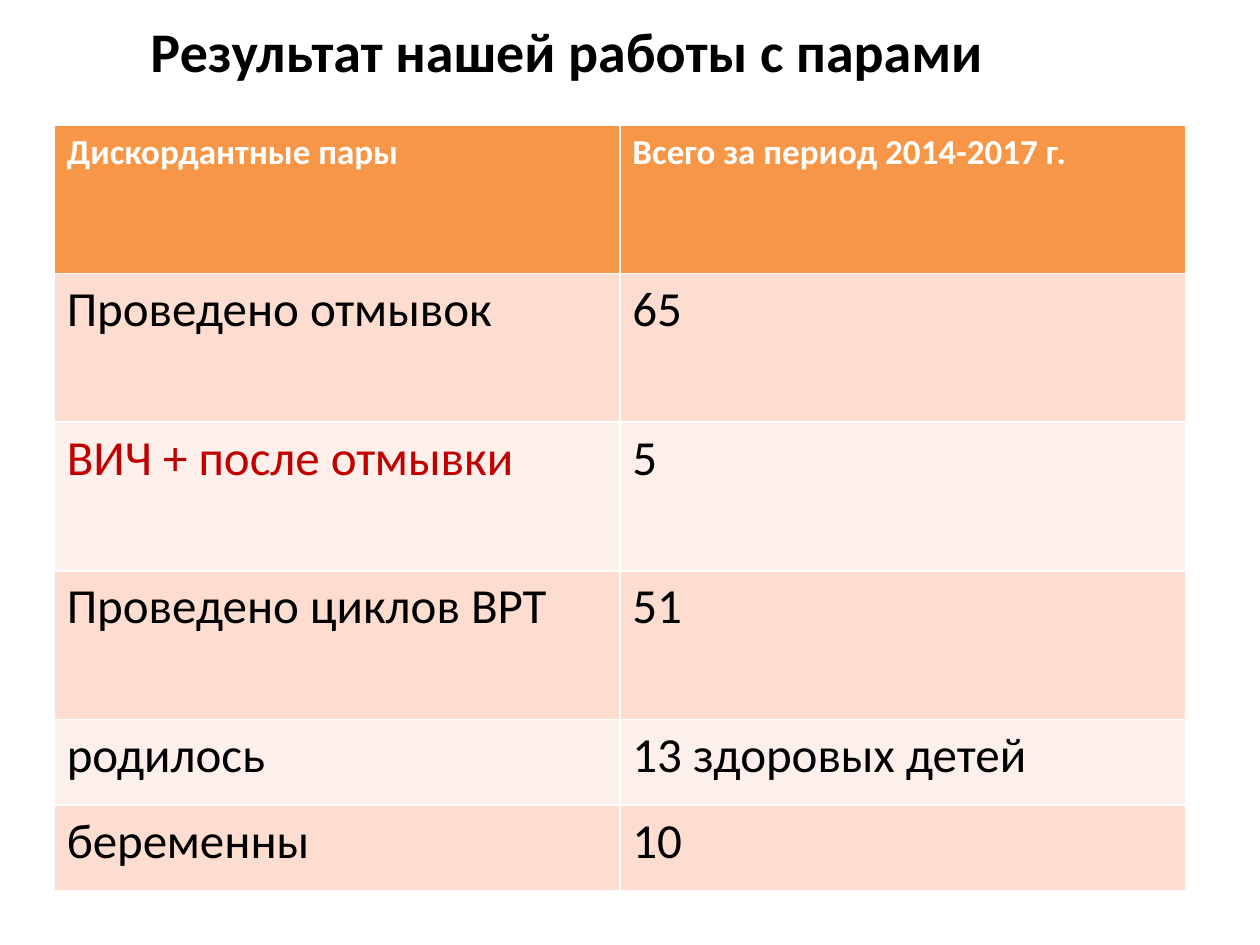
"""Build a slide with the results of work with discordant couples."""
from pptx import Presentation
from pptx.dml.color import RGBColor
from pptx.enum.text import MSO_ANCHOR, PP_ALIGN
from pptx.util import Inches, Pt

TOP = MSO_ANCHOR.TOP
LEFT, CENTER = PP_ALIGN.LEFT, PP_ALIGN.CENTER
FONT = "Calibri"
TITLE_ONLY = 5

BLACK = RGBColor(0x00, 0x00, 0x00)
WHITE = RGBColor(0xFF, 0xFF, 0xFF)
RED = RGBColor(0xC0, 0x00, 0x00)
ORANGE = RGBColor(0xF7, 0x96, 0x46)
BANDS = (RGBColor(0xFD, 0xEF, 0xE9), RGBColor(0xFC, 0xDD, 0xCF))

TITLE = "Результат нашей работы с парами"
HEADER = ("Дискордантные пары", "Всего за период 2014-2017 г.")
RESULTS = [
    ("Проведено отмывок", "65"),
    ("ВИЧ + после отмывки", "5"),
    ("Проведено циклов ВРТ", "51"),
    ("родилось", "13 здоровых детей"),
    ("беременны", "10"),
]
HIGHLIGHT = "ВИЧ + после отмывки"

SLIDE_W, SLIDE_H = 10, 7.5
TITLE_BOX = (0, 0.08, 0.9 * SLIDE_W, 6.59)
TABLE_LEFT, TABLE_TOP, COLUMN_W = 0.43, 0.99, 4.49
TALL, SHORT = 1.18, 0.68
ROW_HEIGHTS = [TALL] * 4 + [SHORT] * 2


def write(frame, text, size, color=BLACK, bold=False, align=LEFT):
    frame.text = text
    paragraph = frame.paragraphs[0]
    paragraph.alignment = align
    font = paragraph.runs[0].font
    font.name, font.size, font.bold = FONT, Pt(size), bold
    font.color.rgb = color


def add_title(slide):
    title = slide.shapes.title
    title.left, title.top, title.width, title.height = map(Inches, TITLE_BOX)
    title.text_frame.vertical_anchor = TOP
    write(title.text_frame, TITLE, size=32, bold=True, align=CENTER)


def add_results(slide):
    rows = [HEADER, *RESULTS]
    place = (TABLE_LEFT, TABLE_TOP, COLUMN_W * len(HEADER), sum(ROW_HEIGHTS))
    results = slide.shapes.add_table(len(rows), len(HEADER), *map(Inches, place)).table
    for column in results.columns:
        column.width = Inches(COLUMN_W)
    for r, (row, height) in enumerate(zip(rows, ROW_HEIGHTS)):
        results.rows[r].height = Inches(height)
        for c, text in enumerate(row):
            cell = results.cell(r, c)
            cell.fill.solid()
            if r == 0:
                cell.fill.fore_color.rgb = ORANGE
                write(cell.text_frame, text, size=20, color=WHITE, bold=True)
            else:
                cell.fill.fore_color.rgb = BANDS[r % 2]
                color = RED if text == HIGHLIGHT else BLACK
                write(cell.text_frame, text, size=28, color=color)


def main():
    deck = Presentation()
    deck.slide_width, deck.slide_height = Inches(SLIDE_W), Inches(SLIDE_H)
    slide = deck.slides.add_slide(deck.slide_layouts[TITLE_ONLY])
    add_title(slide)
    add_results(slide)
    deck.save("out.pptx")


if __name__ == "__main__":
    main()
